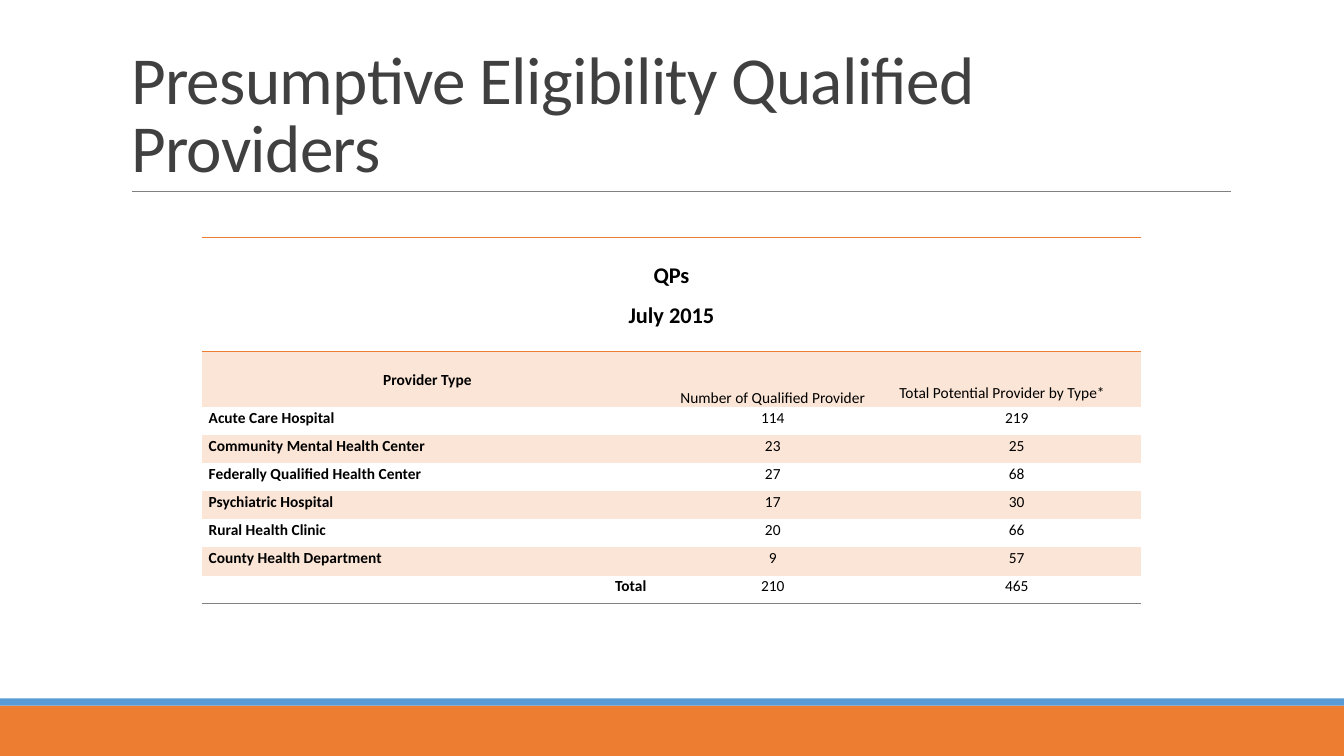
from dataclasses import dataclass

from lxml import etree
from pptx import Presentation
from pptx.dml.color import RGBColor
from pptx.enum import shapes, text
from pptx.oxml.ns import qn
from pptx.util import Inches, Pt


@dataclass(frozen=True)
class Theme:
    font: str = "Calibri"
    orange: str = "ED7D31"
    blue: str = "5B9BD5"
    band: str = "FBE5D6"
    gray: str = "808080"
    title: str = "404040"
    black: str = "000000"
    title_size: int = 48
    heading_size: int = 16
    cell_size: int = 11


THEME = Theme()
NO_STYLE = "{2D5ABB26-0587-4C30-8999-92F81FD0307C}"
LEFT, CENTER, RIGHT = (text.PP_ALIGN.LEFT, text.PP_ALIGN.CENTER,
                       text.PP_ALIGN.RIGHT)
TOP, MIDDLE, BOTTOM = (text.MSO_ANCHOR.TOP, text.MSO_ANCHOR.MIDDLE,
                       text.MSO_ANCHOR.BOTTOM)
PROVIDERS = [
    ("Acute Care Hospital", 114, 219),
    ("Community Mental Health Center", 23, 25),
    ("Federally Qualified Health Center", 27, 68),
    ("Psychiatric Hospital", 17, 30),
    ("Rural Health Clinic", 20, 66),
    ("County Health Department", 9, 57),
    ("Total", 210, 465),
]


def rgb(color):
    return RGBColor.from_string(color)


def style_font(p, size, color, bold=False):
    p.font.name = THEME.font
    p.font.size = Pt(size)
    p.font.bold = bold
    p.font.color.rgb = rgb(color)


def add_footer(s, x, y, w, h):
    stripe = 0.07
    for top, height, color in ((y + stripe, h - stripe, THEME.orange),
                               (y, stripe, THEME.blue)):
        sp = s.shapes.add_shape(shapes.MSO_SHAPE.RECTANGLE, Inches(x),
                                Inches(top), Inches(w), Inches(height))
        sp.shadow.inherit = False
        sp.fill.solid()
        sp.fill.fore_color.rgb = rgb(color)
        sp.line.fill.background()


def add_title(s, x, y, w, h):
    rule = s.shapes.add_connector(
        shapes.MSO_CONNECTOR.STRAIGHT, Inches(x + 0.11), Inches(y + h),
        Inches(x + w + 0.01), Inches(y + h))
    rule.line.color.rgb = rgb(THEME.gray)
    rule.line.width = Pt(0.5)
    etree.SubElement(rule._element.spPr, qn("a:effectLst"))

    sp = s.shapes.title
    sp.left, sp.top, sp.width, sp.height = map(Inches, (x, y, w, h))
    tf = sp.text_frame
    tf.text = "Presumptive Eligibility Qualified Providers"
    tf.word_wrap = True
    tf.auto_size = text.MSO_AUTO_SIZE.NONE
    tf.vertical_anchor = BOTTOM
    p = tf.paragraphs[0]
    p.alignment = LEFT
    p.line_spacing = 0.85
    style_font(p, THEME.title_size, THEME.title)
    p.runs[0].font._element.set("spc", "-50")


def write_cell(cell, content, align=CENTER, anchor=TOP, size=THEME.cell_size,
               bold=False, fill=None, bottom=0):
    cell.margin_left = cell.margin_right = Inches(0.07)
    cell.margin_top, cell.margin_bottom = 0, Inches(bottom)
    cell.vertical_anchor = anchor
    cell.text = content
    for p in cell.text_frame.paragraphs:
        p.alignment = align
        p.line_spacing = 1.07
        p.space_after = Pt(8)
        style_font(p, size, THEME.black, bold)
    if fill:
        cell.fill.solid()
        cell.fill.fore_color.rgb = rgb(fill)
    else:
        cell.fill.background()


def set_borders(row, color, width, sides):
    for cell in row.cells:
        tc_pr = cell._tc.get_or_add_tcPr()
        for i, side in enumerate(sides):
            ln = etree.Element(qn("a:" + side), w=str(Pt(width)))
            fill = etree.SubElement(ln, qn("a:solidFill"))
            etree.SubElement(fill, qn("a:srgbClr"), val=color)
            tc_pr.insert(i, ln)


def add_provider_table(s, x, y, w, h):
    heading_h, header_h = 1.13, 0.55
    row_h = (h - heading_h - header_h) / len(PROVIDERS)
    table = s.shapes.add_table(len(PROVIDERS) + 2, 3, Inches(x), Inches(y),
                               Inches(w), Inches(h)).table
    table.first_row = table.horz_banding = False
    table._tbl.tblPr.find(qn("a:tableStyleId")).text = NO_STYLE
    for column, width in zip(table.columns, (4.48, 2.37, w - 6.85)):
        column.width = Inches(width)
    heights = [heading_h, header_h] + [row_h] * len(PROVIDERS)
    for row, height in zip(table.rows, heights):
        row.height = Inches(height)

    table.cell(0, 0).merge(table.cell(0, 2))
    write_cell(table.cell(0, 0), "QPs\nJuly 2015", anchor=MIDDLE,
               size=THEME.heading_size, bold=True)
    write_cell(table.cell(1, 0), "Provider Type", anchor=MIDDLE, bold=True,
               fill=THEME.band)
    write_cell(table.cell(1, 1), "Number of Qualified Provider",
               anchor=BOTTOM, fill=THEME.band)
    write_cell(table.cell(1, 2), "Total Potential Provider by Type*",
               align=LEFT, anchor=BOTTOM, fill=THEME.band, bottom=0.04)

    for i, (name, *counts) in enumerate(PROVIDERS, start=2):
        fill = THEME.band if i % 2 else None
        write_cell(table.cell(i, 0), name, bold=True, fill=fill,
                   align=RIGHT if name == "Total" else LEFT)
        for j, count in enumerate(counts, start=1):
            write_cell(table.cell(i, j), str(count), fill=fill)

    set_borders(table.rows[0], THEME.orange, 1, ("lnT", "lnB"))
    set_borders(table.rows[len(PROVIDERS) + 1], THEME.gray, 0.5, ("lnB",))


def main():
    prs = Presentation()
    prs.slide_width, prs.slide_height = Inches(13.33), Inches(7.5)
    s = prs.slides.add_slide(prs.slide_layouts[5])
    add_footer(s, 0, 6.93, 13.33, 0.57)
    add_title(s, 1.2, 0.31, 11, 1.59)
    add_provider_table(s, 2, 2.36, 9.32, 3.63)
    prs.save("out.pptx")


if __name__ == "__main__":
    main()
